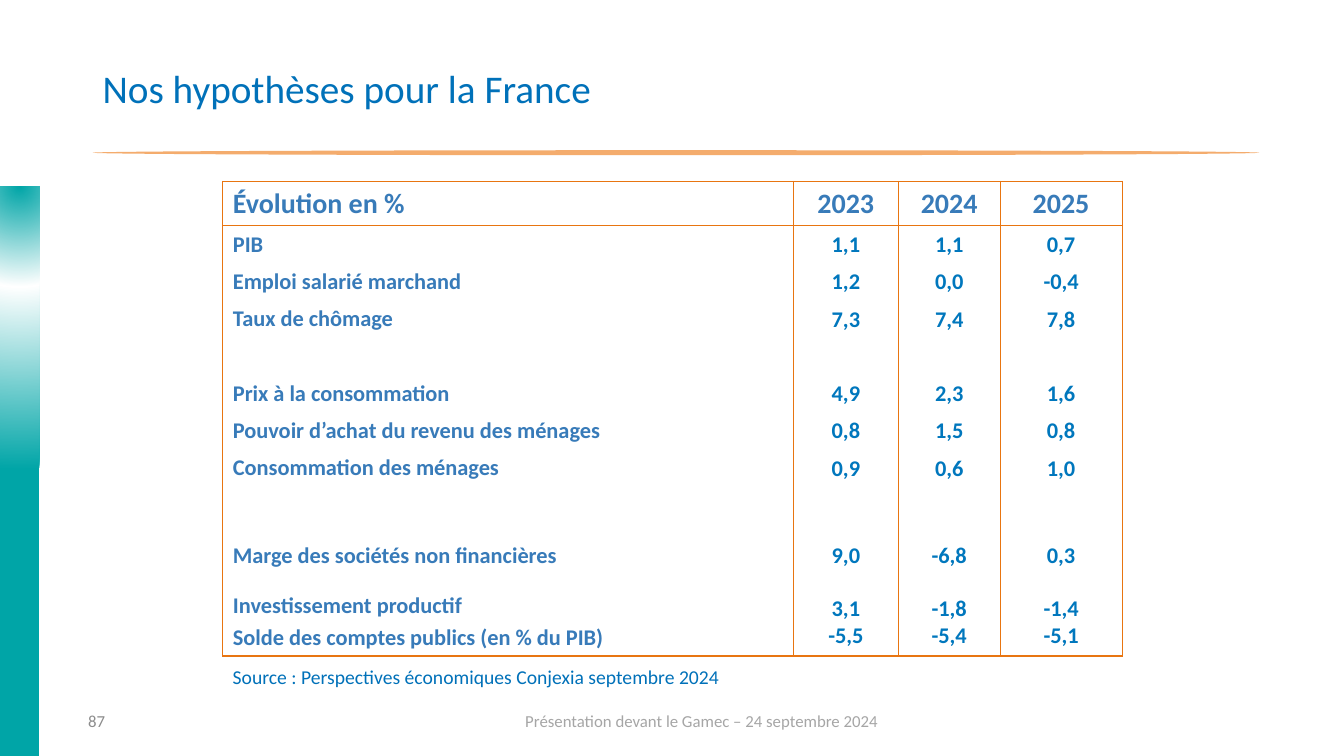
import pptx
import pptx.dml.color
import pptx.enum.shapes
import pptx.enum.text
import pptx.oxml
import pptx.oxml.ns
import pptx.util

Inches, Pt = pptx.util.Inches, pptx.util.Pt
RGBColor = pptx.dml.color.RGBColor
SHAPE = pptx.enum.shapes.MSO_SHAPE
ALIGN = pptx.enum.text.PP_ALIGN
ANCHOR = pptx.enum.text.MSO_ANCHOR

BLUE = RGBColor(0x00, 0x71, 0xB9)
LABEL_BLUE = RGBColor(0x38, 0x7B, 0xB9)
VALUE_BLUE = RGBColor(0x00, 0x77, 0xBD)
ORANGE = RGBColor(0xE8, 0x75, 0x11)
PALE_ORANGE = RGBColor(0xF4, 0xAC, 0x6D)
TEAL = RGBColor(0x00, 0xA5, 0xA7)
WHITE = RGBColor(0xFF, 0xFF, 0xFF)
GREY = RGBColor(0x8C, 0x8C, 0x8C)
LIGHT_GREY = RGBColor(0xA6, 0xA6, 0xA6)

HEADER = ("Évolution en %", "2023", "2024", "2025")
EMPTY = ("", "", "", "")
ROWS = [
    HEADER,
    ("PIB", "1,1", "1,1", "0,7"),
    ("Emploi salarié marchand", "1,2", "0,0", "-0,4"),
    ("Taux de chômage", "7,3", "7,4", "7,8"),
    EMPTY,
    ("Prix à la consommation", "4,9", "2,3", "1,6"),
    ("Pouvoir d’achat du revenu des ménages", "0,8", "1,5", "0,8"),
    ("Consommation des ménages", "0,9", "0,6", "1,0"),
    EMPTY,
    ("Marge des sociétés non financières", "9,0", "-6,8", "0,3"),
    ("Investissement productif\nSolde des comptes publics (en % du PIB)",
     "3,1\n-5,5", "-1,8\n-5,4", "-1,4\n-5,1"),
]
COL_WIDTHS = (5.66, 1.04, 1.01, 1.21)
ROW_HEIGHTS = [0.44] + [0.37] * 8 + [0.63, 0.68]


class SlideBuilder:
    font = "Calibri"

    def __init__(self, slide):
        self.s = slide

    def paragraphs(self, tf, text, align=ALIGN.LEFT, gap=0, spacing=None, **fmt):
        for i, line in enumerate(text.split("\n")):
            p = tf.add_paragraph() if i else tf.paragraphs[0]
            p.alignment = align
            if spacing:
                p.line_spacing = spacing
            if i and gap:
                p.space_before = Pt(gap)
            r = p.add_run()
            r.text = line
            for name, value in {"name": self.font, "size": Pt(fmt["size"]),
                                "bold": fmt.get("bold", False)}.items():
                setattr(r.font, name, value)
            r.font.color.rgb = fmt["color"]

    def text(self, box, text, anchor=ANCHOR.MIDDLE, **fmt):
        tf = self.s.shapes.add_textbox(*map(Inches, box)).text_frame
        tf.word_wrap = True
        tf.vertical_anchor = anchor
        self.paragraphs(tf, text, **fmt)

    def shape(self, kind, box, color):
        sp = self.s.shapes.add_shape(kind, *map(Inches, box))
        sp.shadow.inherit = False
        sp.line.fill.background()
        sp.fill.solid()
        sp.fill.fore_color.rgb = color
        return sp

    def glow_band(self, box, stops):
        sp = self.shape(SHAPE.RECTANGLE, box, TEAL)
        gs = "".join(f'<a:gs pos="{pos * 1000}"><a:srgbClr val="{color}"/></a:gs>'
                     for pos, color in stops)
        grad = pptx.oxml.parse_xml(
            f'<a:gradFill {pptx.oxml.ns.nsdecls("a")} rotWithShape="1"><a:gsLst>{gs}</a:gsLst>'
            '<a:path path="circle"><a:fillToRect l="50000" t="-80000" r="50000" b="180000"/>'
            '</a:path></a:gradFill>')
        spPr = sp.element.spPr
        spPr.replace(spPr.find(pptx.oxml.ns.qn("a:solidFill")), grad)

    def borders(self, cell, sides):
        tcPr = cell._tc.get_or_add_tcPr()
        for side in "LRTB":
            fill = (f'<a:solidFill><a:srgbClr val="{ORANGE}"/></a:solidFill>'
                    if side in sides else "<a:noFill/>")
            tcPr.append(pptx.oxml.parse_xml(
                f'<a:ln{side} {pptx.oxml.ns.nsdecls("a")} w="12700">{fill}</a:ln{side}>'))
        cell.fill.background()

    def cell(self, cell, text, margins, **fmt):
        cell.vertical_anchor = ANCHOR.MIDDLE
        for side, value in zip(("left", "top", "right", "bottom"), margins):
            setattr(cell, f"margin_{side}", Inches(value))
        if text:
            self.paragraphs(cell.text_frame, text, bold=True, **fmt)

    def table(self, left, top, rows, widths, heights):
        t = self.s.shapes.add_table(len(rows), len(widths), Inches(left), Inches(top),
                                    Inches(sum(widths)), Inches(sum(heights))).table
        t.first_row = t.horz_banding = False
        for col, width in zip(t.columns, widths):
            col.width = Inches(width)
        for row, height in zip(t.rows, heights):
            row.height = Inches(height)
        last = len(rows) - 1
        for i, row in enumerate(rows):
            sides = "LR" + ("T" if i < 2 else "") + ("B" if i in (0, last) else "")
            for j, text in enumerate(row):
                header, label = i == 0, j == 0
                roomy = header or (label and text)
                self.cell(t.cell(i, j), text,
                          (0.1, 0.05, 0.1, 0.05) if roomy else (0.01, 0.01, 0.01, 0),
                          size=20 if header else 16,
                          color=LABEL_BLUE if header or label else VALUE_BLUE,
                          align=ALIGN.LEFT if label else ALIGN.CENTER,
                          gap=3.2 if label else 0)
                self.borders(t.cell(i, j), sides)


def main():
    prs = pptx.Presentation()
    prs.slide_width, prs.slide_height = Inches(13.33), Inches(7.5)
    b = SlideBuilder(prs.slides.add_slide(prs.slide_layouts[6]))

    # Side band and title rule
    b.glow_band((0, 1.85, 0.39, 5.67), [(0, TEAL), (35, WHITE), (99, TEAL)])
    b.shape(SHAPE.OVAL, (0.92, 1.49, 11.57, 0.05), PALE_ORANGE)

    # Title
    b.text((0.92, 0.18, 11.5, 1.45), "Nos hypothèses pour la France",
           size=28, color=BLUE, align=ALIGN.JUSTIFY, spacing=0.9)

    # Forecast table and its source
    b.table(2.21, 1.8, ROWS, COL_WIDTHS, ROW_HEIGHTS)
    b.text((2.21, 6.55, 7.49, 0.34), "Source : Perspectives économiques Conjexia septembre 2024",
           anchor=ANCHOR.TOP, size=14, color=BLUE)

    # Footer
    b.text((0.57, 6.95, 0.57, 0.4), "87", size=12, color=GREY, align=ALIGN.RIGHT)
    b.text((4.42, 6.95, 5.08, 0.4), "Présentation devant le Gamec – 24 septembre 2024",
           size=12, color=LIGHT_GREY, align=ALIGN.CENTER)

    prs.save("out.pptx")


if __name__ == "__main__":
    main()
